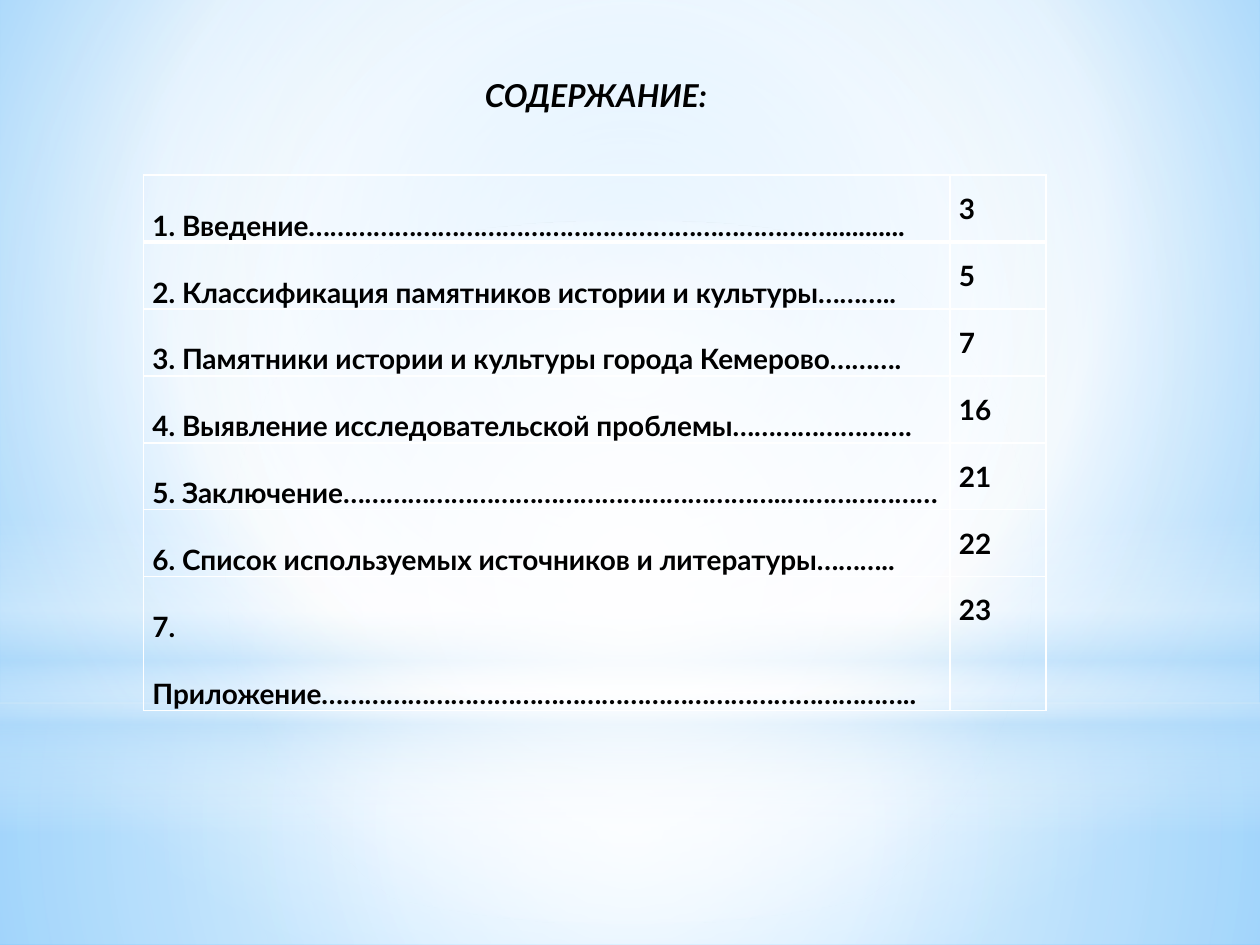
from lxml import etree
from pptx import Presentation
from pptx.dml.color import RGBColor
from pptx.enum.shapes import MSO_SHAPE as Shape
from pptx.enum.text import MSO_ANCHOR as Anchor, MSO_AUTO_SIZE as AutoSize, PP_ALIGN as Align
from pptx.oxml.ns import qn
from pptx.util import Inches, Pt

FONT = "Lato"
BLACK = RGBColor(0x00, 0x00, 0x00)
WHITE = RGBColor(0xFF, 0xFF, 0xFF)
PALE_BLUE = RGBColor(0xB4, 0xDC, 0xFA)
SKY_BLUE = RGBColor(0x9E, 0xD5, 0xFF)
DEEP_BLUE = RGBColor(0x5B, 0xB9, 0xFF)
CENTER = (50, 50, 50, 50)

CONTENTS = [
    ("1. Введение………………………………………………………………............", "3"),
    ("2. Классификация памятников истории и культуры………..", "5"),
    ("3. Памятники истории и культуры города Кемерово……….", "7"),
    ("4. Выявление исследовательской проблемы…………………….", "16"),
    ("5. Заключение……………………………………………………..…………………", "21"),
    ("6. Список используемых источников и литературы………..", "22"),
    ("7. Приложение………………………………………………………………………..", "23"),
]

# Glow layers: shape, top, height, stops (position, colour, opacity), focus;
# a layer without a focus has a vertical linear gradient
GLOWS = [
    (Shape.RECTANGLE, 5.58, 1.92,
     [(0, WHITE, 91), (37, WHITE, 76), (100, PALE_BLUE, 79)], CENTER),
    (Shape.RECTANGLE, 0, 5.58,
     [(0, WHITE, 89), (48, WHITE, 62), (100, PALE_BLUE, 79)], CENTER),
    (Shape.RECTANGLE, 4.12, 2.5,
     [(0, WHITE, 0), (29, WHITE, 30), (45, PALE_BLUE, 40),
      (55, WHITE, 26), (65, PALE_BLUE, 60), (100, WHITE, 0)], None),
    (Shape.OVAL, 1.75, 5.58, [(0, WHITE, 100), (56, WHITE, 0)], CENTER),
]


def add_element(parent, tag, **attributes):
    values = {name: str(value) for name, value in attributes.items()}
    return etree.SubElement(parent, qn(tag), values)


def set_gradient(fill, owner, stops, focus=None):
    fill.gradient()
    gradient = next(owner.iter(qn("a:gradFill")))
    for child in list(gradient):
        gradient.remove(child)
    stop_list = add_element(gradient, "a:gsLst")
    for position, color, opacity in stops:
        stop = add_element(stop_list, "a:gs", pos=position * 1000)
        shade = add_element(stop, "a:srgbClr", val=color)
        if opacity < 100:
            add_element(shade, "a:alpha", val=opacity * 1000)
    if focus:
        circle = add_element(gradient, "a:path", path="circle")
        sides = {side: edge * 1000 for side, edge in zip("ltrb", focus)}
        add_element(circle, "a:fillToRect", **sides)
    else:
        add_element(gradient, "a:lin", ang=90 * 60000, scaled=0)


def add_glow(page, kind, top, height, stops, focus):
    glow = page.shapes.add_shape(kind, 0, Inches(top), Inches(10), Inches(height))
    glow.shadow.inherit = False
    glow.line.fill.background()
    set_gradient(glow.fill, glow.element, stops, focus)


def style_text(para, size, italic=False):
    para.font.name = FONT
    para.font.size = Pt(size)
    para.font.bold = True
    para.font.italic = italic
    para.font.color.rgb = BLACK


def add_borders(cell, top, bottom):
    properties = cell._tc.get_or_add_tcPr()
    for side, width in (("L", 1), ("R", 1), ("T", top), ("B", bottom)):
        line = add_element(properties, f"a:ln{side}", w=Pt(width))
        add_element(add_element(line, "a:solidFill"), "a:srgbClr", val=WHITE)


def fill_cell(cell, text, spacing, row):
    cell.margin_left = cell.margin_right = Inches(0.07)
    cell.margin_top = cell.margin_bottom = 0
    # The rule under the first row is thicker
    add_borders(cell, top=3 if row == 1 else 1, bottom=3 if row == 0 else 1)
    cell.fill.background()
    cell.text = text
    para = cell.text_frame.paragraphs[0]
    para.line_spacing = spacing
    style_text(para, 16)


def add_contents(page):
    table = page.shapes.add_table(
        len(CONTENTS), 2, Inches(1.14), Inches(1.39), Inches(7.16), Inches(3.71)).table
    table.columns[0].width = Inches(6.4)
    table.columns[1].width = Inches(0.76)
    for row, (heading, number) in enumerate(CONTENTS):
        table.rows[row].height = Inches(0.53)
        fill_cell(table.cell(row, 0), heading, 2.0, row)
        fill_cell(table.cell(row, 1), number, 1.5, row)


def set_title(page, text):
    title = page.shapes.title
    title.left, title.top = Inches(0.91), Inches(0.55)
    title.width, title.height = Inches(7.64), Inches(0.71)
    frame = title.text_frame
    frame.text = text
    frame.word_wrap = True
    frame.auto_size = AutoSize.NONE
    frame.vertical_anchor = Anchor.TOP
    frame.paragraphs[0].alignment = Align.CENTER
    style_text(frame.paragraphs[0], 18, italic=True)
    # Bring the title in front of the glow layers
    title.element.getparent().append(title.element)


def main():
    deck = Presentation()
    deck.slide_width, deck.slide_height = Inches(10), Inches(7.5)
    page = deck.slides.add_slide(deck.slide_layouts[5])

    # Background and glow
    set_gradient(page.background.fill, page.element,
                 [(0, SKY_BLUE, 100), (60, WHITE, 100), (100, DEEP_BLUE, 100)],
                 (20, 10, 20, 60))
    for glow in GLOWS:
        add_glow(page, *glow)

    # Table of contents
    add_contents(page)
    set_title(page, "СОДЕРЖАНИЕ:")
    deck.save("out.pptx")


if __name__ == "__main__":
    main()
